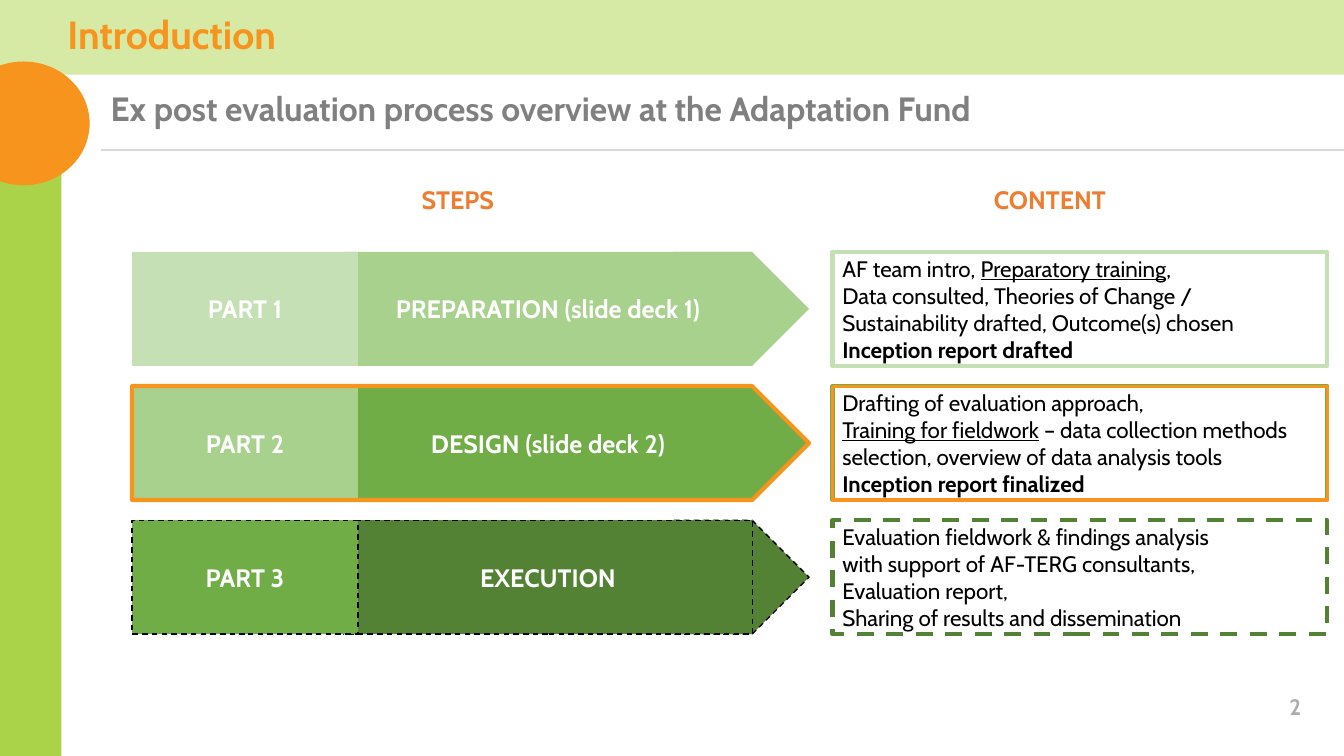
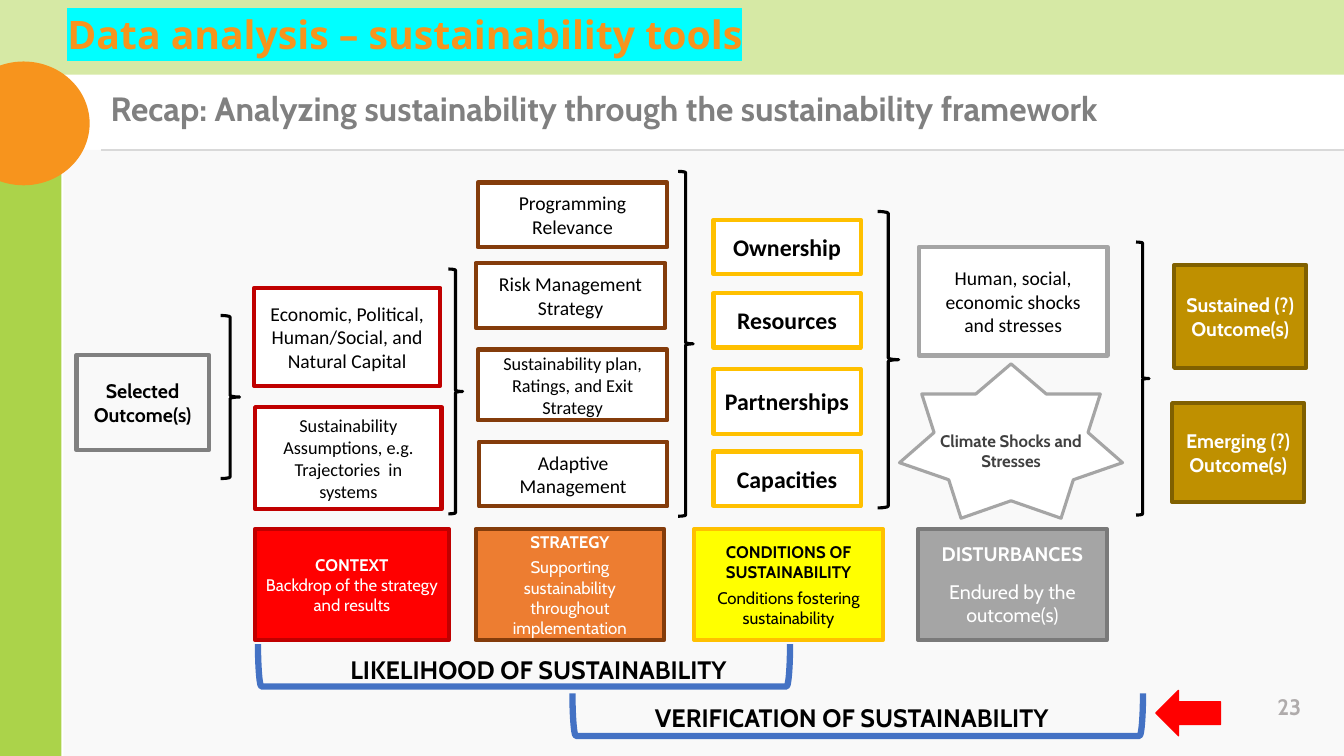
from lxml import etree
from pptx import Presentation
from pptx.dml.color import RGBColor
from pptx.enum.dml import MSO_LINE
from pptx.enum.shapes import MSO_CONNECTOR, MSO_SHAPE
from pptx.enum.text import MSO_ANCHOR, PP_ALIGN
from pptx.oxml.ns import qn
from pptx.util import Cm, Pt

RECT = MSO_SHAPE.RECTANGLE
PENTAGON = MSO_SHAPE.PENTAGON
OVAL = MSO_SHAPE.OVAL
BRACE = MSO_SHAPE.RIGHT_BRACE
BRACKET = MSO_SHAPE.RIGHT_BRACKET
LEFT_ARROW = MSO_SHAPE.LEFT_ARROW
STRAIGHT = MSO_CONNECTOR.STRAIGHT
DASH = MSO_LINE.DASH
LEFT, CENTER, RIGHT = PP_ALIGN.LEFT, PP_ALIGN.CENTER, PP_ALIGN.RIGHT
TOP, MIDDLE = MSO_ANCHOR.TOP, MSO_ANCHOR.MIDDLE

WHITE = RGBColor(0xFF, 0xFF, 0xFF)
BLACK = RGBColor(0, 0, 0)
LIME = RGBColor(0xAB, 0xD3, 0x4A)
PALE_LIME = RGBColor(0xD6, 0xE9, 0xA5)
ORANGE = RGBColor(0xF7, 0x94, 0x1D)
RUST = RGBColor(0xED, 0x7D, 0x31)
BROWN = RGBColor(0x84, 0x3C, 0x0B)
PALE_GREEN = RGBColor(0xC5, 0xE0, 0xB4)
LIGHT_GREEN = RGBColor(0xA9, 0xD1, 0x8E)
GREEN = RGBColor(0x70, 0xAD, 0x47)
DARK_GREEN = RGBColor(0x54, 0x82, 0x35)
PANEL_GRAY = RGBColor(0xF9, 0xF9, 0xF9)
RULE_GRAY = RGBColor(0xD9, 0xD9, 0xD9)
NUMBER_GRAY = RGBColor(0xAF, 0xAB, 0xAB)
SILVER = RGBColor(0xA5, 0xA5, 0xA5)
GRAY = RGBColor(0x80, 0x80, 0x80)
STEEL = RGBColor(0x7A, 0x7A, 0x7A)
CHARCOAL = RGBColor(0x40, 0x40, 0x40)
RED = RGBColor(0xFF, 0, 0)
CRIMSON = RGBColor(0xC0, 0, 0)
YELLOW = RGBColor(0xFF, 0xFF, 0)
AMBER = RGBColor(0xFF, 0xC0, 0)
GOLD = RGBColor(0xBF, 0x90, 0)
DARK_GOLD = RGBColor(0x80, 0x60, 0)
BLUE = RGBColor(0x44, 0x72, 0xC4)
CYAN = RGBColor(0, 0xFF, 0xFF)

HEADING_FONT = "Cabin"
BODY_FONT = "Calibri"
TITLE_FONT = "Open Sans"
WIDTH, HEIGHT = 33.87, 19.05


def lengths(values):
    return [Cm(value) for value in values]


def write(box, lines, size, color, font=HEADING_FONT, bold=False, align=CENTER,
          anchor=MIDDLE, gap=0, spacing=1.0):
    """Fill a box; a line is a string or a list of (text, marks) with marks b and u."""
    frame = box.text_frame
    frame.word_wrap = True
    frame.vertical_anchor = anchor
    for index, line in enumerate(lines):
        para = frame.paragraphs[0] if index == 0 else frame.add_paragraph()
        para.alignment = align
        para.line_spacing = spacing
        if index and gap:
            para.space_before = Pt(gap)
        para.font.name = font
        para.font.size = Pt(size)
        para.font.bold = bold
        para.font.color.rgb = color
        for text, marks in ([(line, "")] if isinstance(line, str) else line):
            span = para.add_run()
            span.text = text
            if "b" in marks:
                span.font.bold = True
            if "u" in marks:
                span.font.underline = True


def paint(shape, fill=None, line=None, weight=3.0, dash=None):
    shape.shadow.inherit = False
    if fill is None:
        shape.fill.background()
    else:
        shape.fill.solid()
        shape.fill.fore_color.rgb = fill
    if line is None:
        shape.line.fill.background()
    else:
        shape.line.color.rgb = line
        shape.line.width = Pt(weight)
        if dash is not None:
            shape.line.dash_style = dash


def add_shape(page, kind, at, fill=None, line=None, weight=3.0, dash=None):
    shape = page.shapes.add_shape(kind, *lengths(at))
    paint(shape, fill, line, weight, dash)
    return shape


def add_text(page, at, text, size, color, **style):
    box = page.shapes.add_textbox(*lengths(at))
    write(box, [text], size, color, **style)
    return box


def highlight(box, color):
    properties = box.text_frame.paragraphs[0].runs[0].font._element
    mark = etree.SubElement(properties, qn("a:highlight"))
    etree.SubElement(mark, qn("a:srgbClr"), val=str(color))


def add_frame(page, title, subtitle, number, title_font=HEADING_FONT, panel=None):
    """Draw the stripe, band, disc, headings, rule and page number; return the title."""
    add_shape(page, RECT, (-0.33, 0, 1.88, HEIGHT), LIME)
    if panel is not None:
        add_shape(page, RECT, (1.6, 3.78, WIDTH - 1.6, HEIGHT - 3.78), panel)
    add_shape(page, RECT, (-0.28, 0, WIDTH + 0.28, 1.88), PALE_LIME)
    add_shape(page, OVAL, (-1.07, 1.55, 3.33, 3.12), ORANGE)
    heading = dict(bold=True, align=LEFT, anchor=TOP, spacing=0.9)
    title_box = add_text(page, (1.45, 0.28, 26.8, 1.63), title, 28, ORANGE,
                         font=title_font, **heading)
    add_text(page, (2.54, 2.21, 31.3, 1.17), subtitle, 24, GRAY, **heading)
    rule = page.shapes.add_connector(STRAIGHT, *lengths((2.54, 3.78, WIDTH, 3.78)))
    rule.line.color.rgb = RULE_GRAY
    rule.line.width = Pt(1.5)
    etree.SubElement(rule._element.spPr, qn("a:effectLst"))
    add_text(page, (30.73, 17.3, 2.31, 1.02), number, 16, NUMBER_GRAY,
             bold=True, align=RIGHT)
    return title_box


def add_step(page, top, part, step, part_fill, step_fill, content, content_line,
             dash=None):
    height = 2.87
    outline = dict(line=BLACK, weight=1, dash=dash) if dash is not None else {}
    add_shape(page, PENTAGON, (16.99, top, 3.4, height), step_fill, **outline)
    for left, width, text, fill in ((8.65, 10.32, step, step_fill),
                                    (3.33, 5.69, part, part_fill)):
        box = add_shape(page, RECT, (left, top, width, height), fill, **outline)
        write(box, [text], 18, WHITE, bold=True)
    box = add_shape(page, RECT, (20.98, top, 12.47, height), WHITE, content_line,
                    dash=dash)
    write(box, content, 16, BLACK, align=LEFT)


def build_overview(page):
    add_frame(page, "Introduction",
              "Ex post evaluation process overview at the Adaptation Fund", "2")
    for center, text in ((11.54, "STEPS"), (26.46, "CONTENT")):
        add_text(page, (center - 3, 4.52, 6, 1.02), text, 18, RUST, bold=True,
                 anchor=TOP)

    first, pitch = 6.35, 3.38
    steps = (
        ("PART 1", "PREPARATION (slide deck 1)", PALE_GREEN, LIGHT_GREEN, [
            [("AF team intro, ", ""), ("Preparatory training", "u"), (",", "")],
            "Data consulted, Theories of Change / Sustainability drafted, "
            "Outcome(s) chosen",
            [("Inception report drafted", "b")]], PALE_GREEN),
        ("PART 2", "DESIGN (slide deck 2)", LIGHT_GREEN, GREEN, [
            "Drafting of evaluation approach,",
            [("Training for fieldwork", "u"),
             (" – data collection methods selection, overview of data analysis tools",
              "")],
            [("Inception report finalized", "b")]], GREEN),
        ("PART 3", "EXECUTION", GREEN, DARK_GREEN, [
            "Evaluation fieldwork & findings analysis",
            "with support of AF-TERG consultants,",
            "Evaluation report,",
            "Sharing of results and dissemination"], DARK_GREEN, DASH),
    )
    for index, step in enumerate(steps):
        add_step(page, first + index * pitch, *step)

    current = first + pitch
    add_shape(page, PENTAGON, (3.33, current, 17.06, 2.87), line=ORANGE)
    add_shape(page, RECT, (20.98, current, 12.47, 2.87), line=ORANGE, weight=2.25)


def add_star(page, text):
    center = 25.48
    right = [(0, 9.17), (0.89, 9.93), (2.25, 9.93), (1.94, 10.9), (2.81, 11.66),
             (1.57, 12.09), (1.26, 13.06), (0, 12.62)]
    left = [(-offset, y) for offset, y in right[-2:0:-1]]
    points = [lengths((center + offset, y)) for offset, y in right + left]
    builder = page.shapes.build_freeform(*points[0])
    builder.add_line_segments(points[1:], close=True)
    star = builder.convert_to_shape()
    paint(star, WHITE, SILVER, 2.25)
    write(star, [text], 12, CHARCOAL, bold=True)
    frame = star.text_frame
    frame.margin_left = frame.margin_right = Cm(0.6)
    frame.margin_top = Cm(0.63)


def build_framework(page):
    title = add_frame(page, "Data analysis – sustainability tools",
                      "Recap: Analyzing sustainability through the sustainability "
                      "framework", "23", TITLE_FONT, PANEL_GRAY)
    highlight(title, CYAN)

    # Spans of the assessment
    for at, label_at, text in (
            ((12.67, 10.06, 1.07, 13.41), (6.93, 16.36, 13.28, 1.02),
             "LIKELIHOOD OF SUSTAINABILITY"),
            ((21.08, 10.82, 1.07, 14.38), (15.19, 17.58, 12.55, 1.02),
             "VERIFICATION OF SUSTAINABILITY")):
        add_shape(page, BRACKET, at, line=BLUE, weight=4.5).rotation = 90
        add_text(page, label_at, text, 18, BLACK, bold=True, anchor=TOP)

    # Factors
    for at, line, size, text in (
            ((6.4, 7.26, 4.7, 2.46), CRIMSON, 14,
             "Economic, Political, Human/Social, and Natural Capital"),
            ((6.43, 10.26, 4.7, 2.57), CRIMSON, 13,
             "Sustainability Assumptions, e.g. Trajectories  in systems"),
            ((12.04, 4.6, 4.78, 1.63), BROWN, 14, "Programming Relevance"),
            ((11.99, 6.63, 4.78, 1.63), BROWN, 14, "Risk Management Strategy"),
            ((12.04, 8.81, 4.78, 1.78), BROWN, 13,
             "Sustainability plan, Ratings, and Exit Strategy"),
            ((12.07, 11.13, 4.75, 1.63), BROWN, 14, "Adaptive Management"),
            ((23.16, 6.22, 4.75, 2.74), SILVER, 14,
             "Human, social, economic shocks and stresses")):
        write(add_shape(page, RECT, at, WHITE, line), [text], size, BLACK, BODY_FONT)

    for top, height, text in ((5.54, 1.37, "Ownership"), (7.39, 1.37, "Resources"),
                              (9.3, 1.63, "Partnerships"), (11.38, 1.37, "Capacities")):
        box = add_shape(page, RECT, (17.98, top, 3.71, height), WHITE, AMBER)
        write(box, [text], 17, BLACK, BODY_FONT, bold=True)
    add_star(page, "Climate Shocks and Stresses")

    # Legend under each column
    for left, width, fill, line, color, size, gap, name, meaning in (
            (6.43, 4.88, RED, CRIMSON, WHITE, 12, 0, "CONTEXT",
             "Backdrop of the strategy and results"),
            (11.99, 4.75, RUST, BROWN, WHITE, 12, 4, "STRATEGY",
             "Supporting sustainability throughout implementation"),
            (17.5, 4.75, YELLOW, AMBER, BLACK, 12, 4, "CONDITIONS OF SUSTAINABILITY",
             "Conditions fostering sustainability"),
            (23.14, 4.75, SILVER, STEEL, WHITE, 14, 10, "DISTURBANCES",
             "Endured by the outcome(s)")):
        box = add_shape(page, RECT, (left, 13.33, width, 2.8), fill, line)
        write(box, [[(name, "b")], meaning], size, color, gap=gap)

    # Outcomes
    for at, fill, line, color, text in (
            ((1.93, 8.94, 3.33, 2.41), None, GRAY, BLACK, "Selected Outcome(s)"),
            ((29.59, 6.68, 3.33, 2.59), GOLD, DARK_GOLD, WHITE,
             "Sustained (?) Outcome(s)"),
            ((29.54, 10.16, 3.33, 2.49), GOLD, DARK_GOLD, WHITE,
             "Emerging (?) Outcome(s)")):
        write(add_shape(page, RECT, at, fill, line), [text], 14, color, bold=True)

    for at in ((5.56, 7.95, 0.48, 4.11), (11.3, 6.78, 0.36, 6.17),
               (17.09, 4.32, 0.38, 8.69), (22.12, 5.33, 0.53, 7.47),
               (28.63, 6.1, 0.33, 6.88)):
        add_shape(page, BRACE, at, line=BLACK, weight=2.25)
    add_shape(page, LEFT_ARROW, (29.13, 17.4, 1.63, 1.14), RED, RED, 1)


def main():
    deck = Presentation()
    deck.slide_width, deck.slide_height = lengths((WIDTH, HEIGHT))
    blank = deck.slide_layouts[6]
    for build in (build_overview, build_framework):
        build(deck.slides.add_slide(blank))
    deck.save("out.pptx")


if __name__ == "__main__":
    main()
